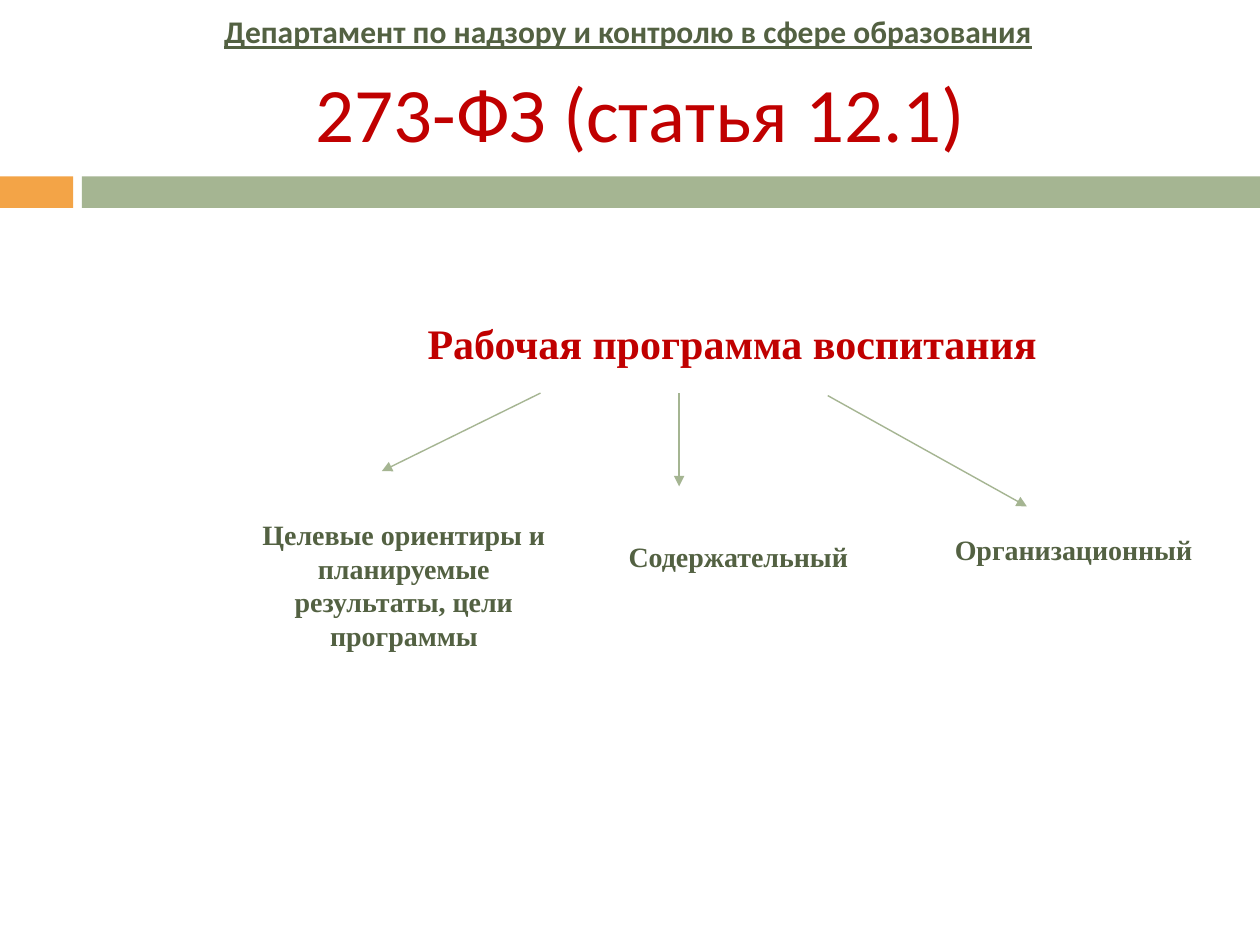
import pptx
import pptx.dml.color
import pptx.enum.shapes
import pptx.enum.text
import pptx.oxml
import pptx.oxml.ns
import pptx.util

Inches = pptx.util.Inches
ALIGN = pptx.enum.text.PP_ALIGN
ANCHOR = pptx.enum.text.MSO_ANCHOR

THEME = {
    "orange": "F3A447", "sage": "A5B592", "red": "C00000", "green": "536142",
    "title": {"name": "Calibri", "size": 44, "color": "red"},
    "department": {"name": "Calibri", "size": 18, "color": "green", "bold": True, "underline": True},
    "heading": {"name": "Times New Roman", "size": 24, "color": "red", "bold": True},
    "section": {"name": "Times New Roman", "size": 16, "color": "green", "bold": True},
}

# Content: boxes are left, top, width, height in inches
BAND_TOP, BAND_HEIGHT = 1.4, 0.25
BANDS = [(0, 0.58, "orange"), (0.65, 9.35, "sage")]  # left, width, colour
TEXTS = [
    ("273-ФЗ (статья 12.1)", (0.67, 0.41, 8.83, 0.95), "title", ALIGN.CENTER, ANCHOR.MIDDLE),
    ("Департамент по надзору и контролю в сфере образования",
     (1.3, 0.05, 6.99, 0.47), "department", ALIGN.RIGHT, ANCHOR.TOP),
    ("Рабочая программа воспитания", (2.72, 2.47, 6.18, 0.51), "heading", ALIGN.CENTER, ANCHOR.TOP),
    ("Целевые ориентиры и планируемые результаты, цели программы",
     (1.85, 4.06, 2.71, 1.18), "section", ALIGN.CENTER, ANCHOR.TOP),
    ("Содержательный", (4.89, 4.23, 2.05, 0.37), "section", ALIGN.LEFT, ANCHOR.TOP),
    ("Организационный", (7.48, 4.18, 2.17, 0.37), "section", ALIGN.LEFT, ANCHOR.TOP),
]
ARROWS = [  # start x, start y, end x, end y
    (4.29, 3.12, 3.03, 3.74),
    (5.39, 3.12, 5.39, 3.86),
    (6.57, 3.14, 8.15, 4.02),
]


def theme_color(name):
    return pptx.dml.color.RGBColor.from_string(THEME[name])


def add_band(slide, left, width, color):
    shape = slide.shapes.add_shape(
        pptx.enum.shapes.MSO_SHAPE.RECTANGLE,
        *map(Inches, (left, BAND_TOP, width, BAND_HEIGHT)))
    shape.shadow.inherit = False
    shape.fill.solid()
    shape.fill.fore_color.rgb = theme_color(color)
    shape.line.fill.background()


def add_text(slide, text, box, style, alignment, anchor):
    frame = slide.shapes.add_textbox(*map(Inches, box)).text_frame
    frame.word_wrap = True
    frame.vertical_anchor = anchor
    paragraph = frame.paragraphs[0]
    paragraph.alignment = alignment
    run = paragraph.add_run()
    run.text = text
    for key, value in THEME[style].items():
        if key == "color":
            run.font.color.rgb = theme_color(value)
        else:
            setattr(run.font, key, pptx.util.Pt(value) if key == "size" else value)


def add_arrow(slide, points):
    connector = slide.shapes.add_connector(
        pptx.enum.shapes.MSO_CONNECTOR.STRAIGHT, *map(Inches, points))
    connector.line.color.rgb = theme_color("sage")
    connector.line.width = pptx.util.Pt(0.79)
    # Arrowhead at the end, no shadow
    tail = pptx.oxml.parse_xml(f'<a:tailEnd {pptx.oxml.ns.nsdecls("a")} type="triangle"/>')
    connector.line._get_or_add_ln().append(tail)
    effects = pptx.oxml.parse_xml(f'<a:effectLst {pptx.oxml.ns.nsdecls("a")}/>')
    connector._element.spPr.append(effects)


def main():
    presentation = pptx.Presentation()
    presentation.slide_width = Inches(10)
    presentation.slide_height = Inches(7.5)
    slide = presentation.slides.add_slide(presentation.slide_layouts[6])
    # Divider under the title
    for band in BANDS:
        add_band(slide, *band)
    # Titles and section names
    for item in TEXTS:
        add_text(slide, *item)
    # Arrows from the programme to its sections
    for points in ARROWS:
        add_arrow(slide, points)
    presentation.save("out.pptx")


if __name__ == "__main__":
    main()
